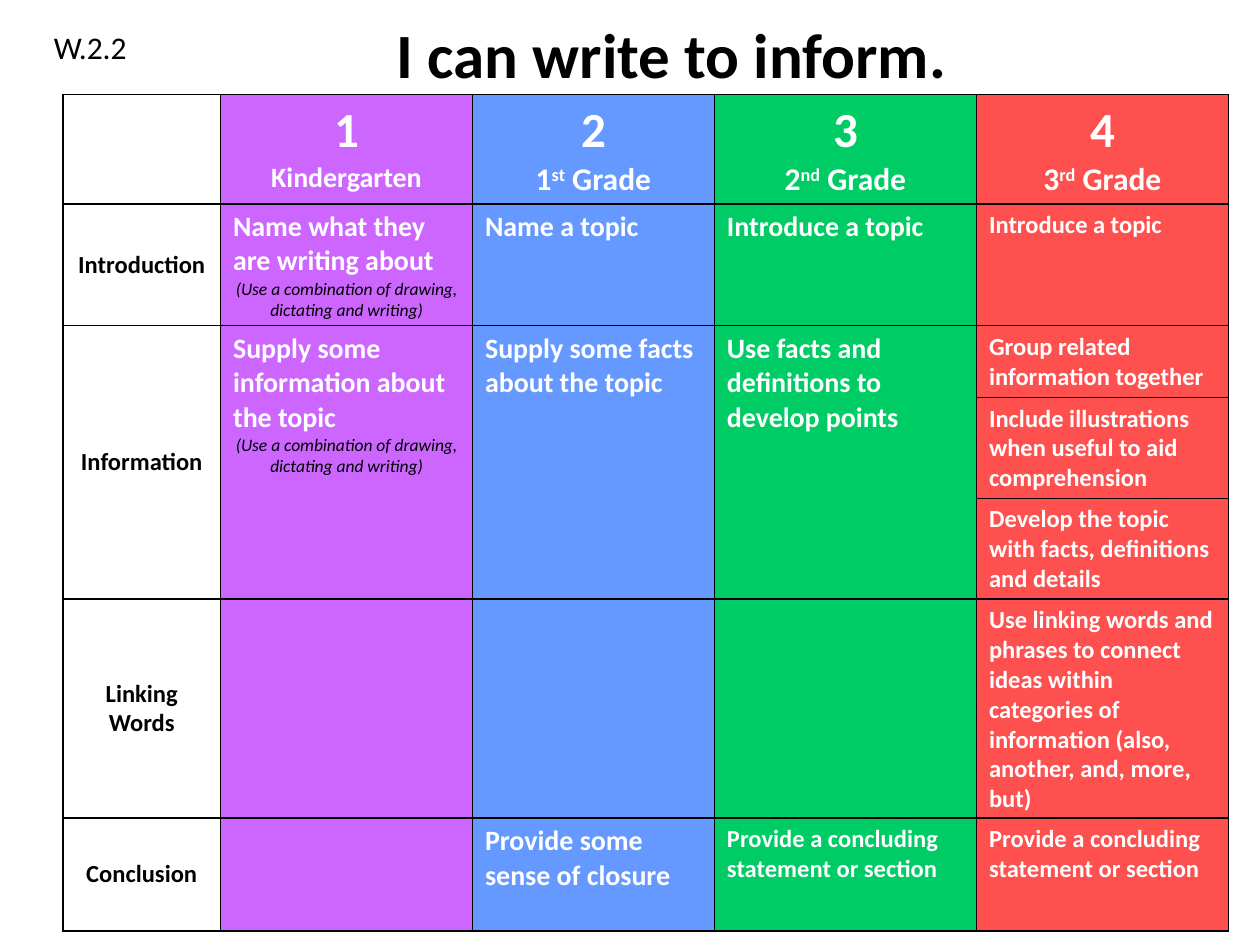
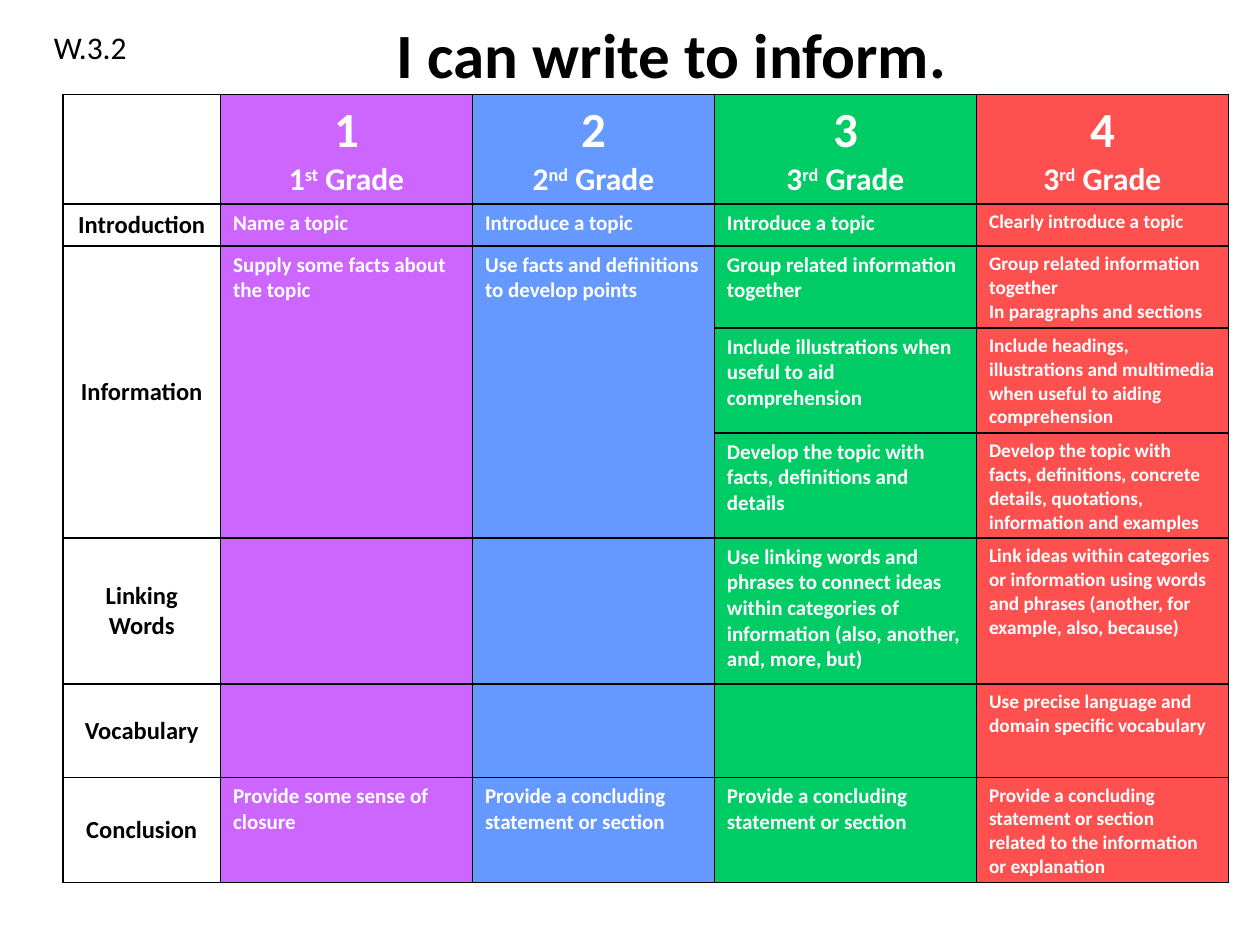
from lxml import etree
from pptx import Presentation
from pptx import util as u
from pptx.dml.color import RGBColor
from pptx.enum import text
from pptx.oxml import ns

FONT = "Calibri"
BLACK, WHITE = "000000", "FFFFFF"
LEVEL_COLOURS = ["CC66FF", "6699FF", "00CC66", "FF5050"]
CENTER, LEFT = text.PP_ALIGN.CENTER, text.PP_ALIGN.LEFT
MIDDLE, TOP = text.MSO_ANCHOR.MIDDLE, text.MSO_ANCHOR.TOP

# Shared grid: 40 columns by 30 rows over a 10 x 7.5 inch slide
GRID_COLUMNS, GRID_ROWS = 40, 30
RUBRIC_COLUMNS = [5, 8, 7.68, 8.32, 8]
SAME = None  # the cell continues the one above

DRAWING = "(Use a combination of drawing, dictating and writing)"
ILLUSTRATIONS = "Include illustrations when useful to aid comprehension"
DEVELOP = "Develop the topic with facts, definitions and details"
LINKING = ("Use linking words and phrases to connect ideas within categories "
           "of information (also, another, and, more, but)")
CONCLUDING = "Provide a concluding statement or section"


def colour(value):
    return RGBColor.from_string(value)


class RubricDeck:
    def __init__(self):
        self.deck = Presentation()
        self.deck.slide_width, self.deck.slide_height = u.Inches(10), u.Inches(7.5)
        self.slide = None

    def x(self, columns):
        return round(self.deck.slide_width * columns / GRID_COLUMNS)

    def y(self, rows):
        return round(self.deck.slide_height * rows / GRID_ROWS)

    def new_slide(self):
        self.slide = self.deck.slides.add_slide(self.deck.slide_layouts[6])

    def run(self, paragraph, words, size, ink=BLACK, bold=True, italic=False, raised=False):
        run = paragraph.add_run()
        run.text = words
        font = run.font
        font.name, font.size, font.bold, font.italic = FONT, u.Pt(size), bold, italic
        font.color.rgb = colour(ink)
        if raised:
            run._r.get_or_add_rPr().set("baseline", "30000")

    def label(self, words, left, top, width, height, size, bold=False,
              align=LEFT, anchor=TOP):
        frame = self.slide.shapes.add_textbox(
            self.x(left), self.y(top), self.x(width), self.y(height)).text_frame
        frame.word_wrap, frame.vertical_anchor = True, anchor
        frame.paragraphs[0].alignment = align
        self.run(frame.paragraphs[0], words, size, bold=bold)

    def border(self, cell):
        properties = cell._tc.get_or_add_tcPr()
        for place, side in enumerate(("lnL", "lnR", "lnT", "lnB")):
            line = etree.Element(ns.qn("a:" + side), w=str(u.Pt(1)))
            fill = etree.SubElement(line, ns.qn("a:solidFill"))
            etree.SubElement(fill, ns.qn("a:srgbClr"), val=BLACK)
            properties.insert(place, line)

    def level_heading(self, cell, level, grade):
        number, name = cell.text_frame.paragraphs[0], cell.text_frame.add_paragraph()
        number.alignment = name.alignment = CENTER
        self.run(number, str(level), 28, WHITE)
        if grade[0].isdigit():
            self.run(name, grade[0], 18, WHITE)
            self.run(name, grade[1:3], 18, WHITE, raised=True)
            self.run(name, grade[3:], 18, WHITE)
        else:
            self.run(name, grade, 16, WHITE)

    def row_heading(self, cell, part):
        cell.vertical_anchor = MIDDLE
        cell.text_frame.paragraphs[0].alignment = CENTER
        self.run(cell.text_frame.paragraphs[0], part, 14)

    def criterion(self, cell, words, size):
        for index, line in enumerate(words.split("\n")):
            frame = cell.text_frame
            paragraph = frame.add_paragraph() if index else frame.paragraphs[0]
            if line == DRAWING:
                paragraph.alignment = CENTER
                self.run(paragraph, line, 10, bold=False, italic=True)
            else:
                self.run(paragraph, line, size, WHITE)

    def rubric(self, grades, criteria, heights, sizes):
        table = self.slide.shapes.add_table(
            len(heights), len(RUBRIC_COLUMNS), self.x(2), self.y(3),
            self.x(sum(RUBRIC_COLUMNS)), self.y(sum(heights))).table
        table.first_row = table.horz_banding = False
        for column, width in zip(table.columns, RUBRIC_COLUMNS):
            column.width = self.x(width)
        for row, height in zip(table.rows, heights):
            row.height = self.y(height)

        # Fills and borders
        for row in table.rows:
            for cell, fill in zip(row.cells, [None] + LEVEL_COLOURS):
                if fill:
                    cell.fill.solid()
                    cell.fill.fore_color.rgb = colour(fill)
                else:
                    cell.fill.background()
                self.border(cell)

        # Headings and criteria
        for level, grade in enumerate(grades, 1):
            self.level_heading(table.cell(0, level), level, grade)
        for r, (part, *levels) in enumerate(criteria, 1):
            if part:
                self.row_heading(table.cell(r, 0), part)
            for c, entry in enumerate(levels, 1):
                words, size = entry if isinstance(entry, tuple) else (entry, sizes[c - 1])
                if words:
                    self.criterion(table.cell(r, c), words, size)

        # Cells that run down over several rows
        for c in range(len(RUBRIC_COLUMNS)):
            entries = [row[c] for row in criteria] + [""]
            start = 0
            for r in range(1, len(entries)):
                if entries[r] is not SAME:
                    if r - start > 1:
                        table.cell(start + 1, c).merge(table.cell(r, c))
                    start = r

    def rubric_slide(self, standard, *rubric):
        self.new_slide()
        self.label("I can write to inform.", 4.32, -0.32, 34, 4, 36, True, CENTER, MIDDLE)
        self.label(standard, 1.32, 0.68, 5.68, 1.6, 18)
        self.rubric(*rubric)


SECOND_GRADE = [
    ("Introduction", "Name what they are writing about\n" + DRAWING,
     "Name a topic", "Introduce a topic", "Introduce a topic"),
    ("Information", "Supply some information about the topic\n" + DRAWING,
     "Supply some facts about the topic",
     "Use facts and definitions to develop points",
     "Group related information together"),
    (SAME, SAME, SAME, SAME, ILLUSTRATIONS),
    (SAME, SAME, SAME, SAME, DEVELOP),
    ("Linking Words", "", "", "", LINKING),
    ("Conclusion", "", "Provide some sense of closure", (CONCLUDING, 14), CONCLUDING),
]

THIRD_GRADE = [
    ("Introduction", "Name a topic", "Introduce a topic", "Introduce a topic",
     "Clearly introduce a topic"),
    ("Information", "Supply some facts about the topic",
     "Use facts and definitions to develop points",
     "Group related information together",
     "Group related information together\nIn paragraphs and sections"),
    (SAME, SAME, SAME, ILLUSTRATIONS,
     "Include headings, illustrations and multimedia when useful to aiding comprehension"),
    (SAME, SAME, SAME, DEVELOP,
     "Develop the topic with facts, definitions, concrete details, quotations, "
     "information and examples"),
    ("Linking Words", "", "", LINKING,
     "Link ideas within categories or information using words and phrases "
     "(another, for example, also, because)"),
    ("Vocabulary", "", "", "", "Use precise language and domain specific vocabulary"),
    ("Conclusion", "Provide some sense of closure", CONCLUDING, CONCLUDING,
     CONCLUDING + " related to the information or explanation"),
]


def main():
    rubrics = RubricDeck()
    rubrics.rubric_slide(
        "W.2.2", ["Kindergarten", "1st Grade", "2nd Grade", "3rd Grade"], SECOND_GRADE,
        [3.46, 3.84, 2.28, 3.2, 3.2, 6.94, 3.6], [16, 16, 16, 14])
    rubrics.rubric_slide(
        "W.3.2", ["1st Grade", "2nd Grade", "3rd Grade", "3rd Grade"], THIRD_GRADE,
        [3.46, 1.33, 2.6, 3.33, 3.33, 4.63, 2.97, 3.33], [12, 12, 12, 11])
    rubrics.deck.save("out.pptx")


if __name__ == "__main__":
    main()
